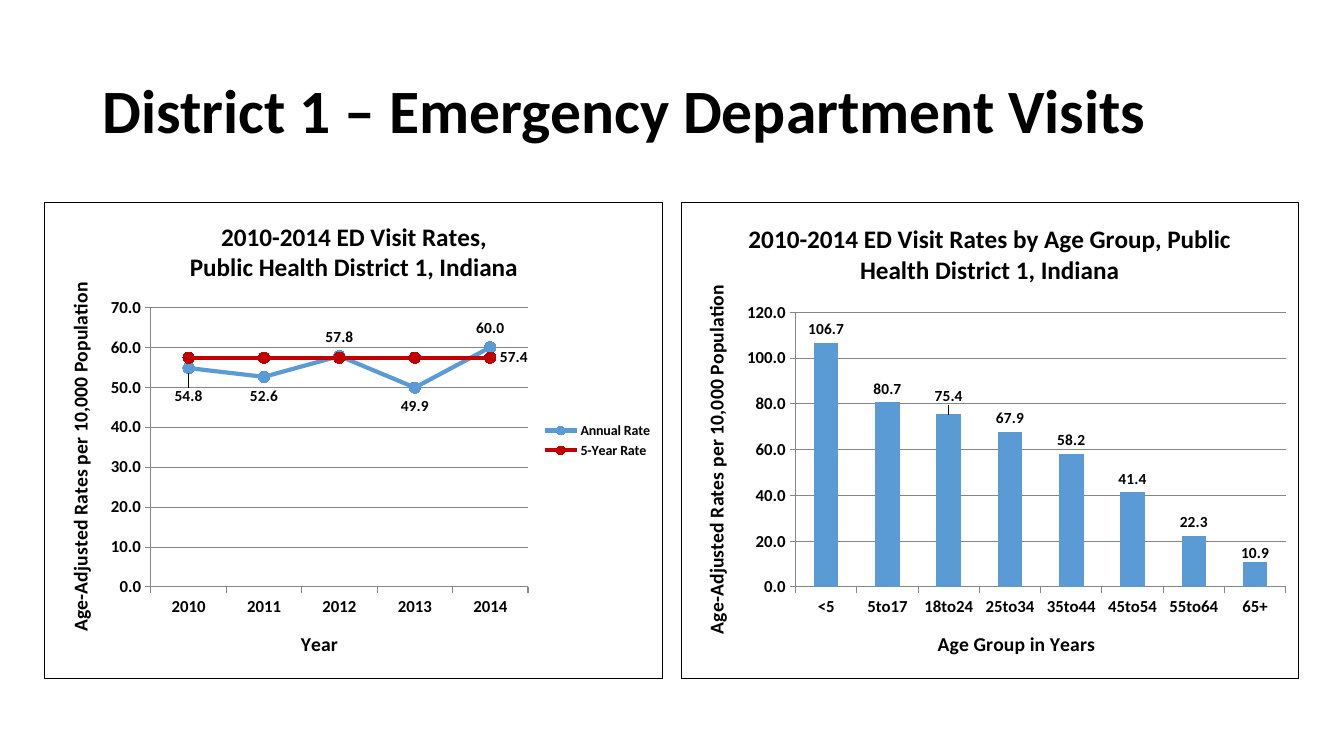
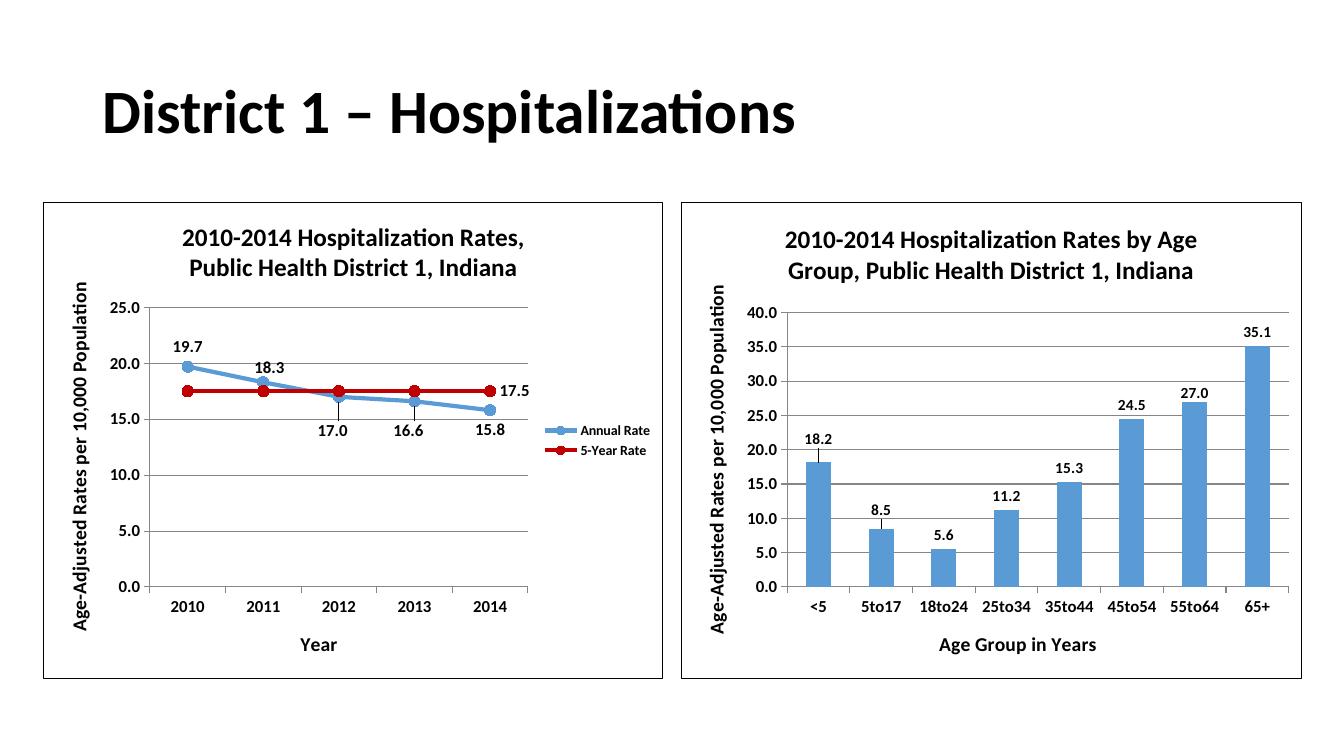
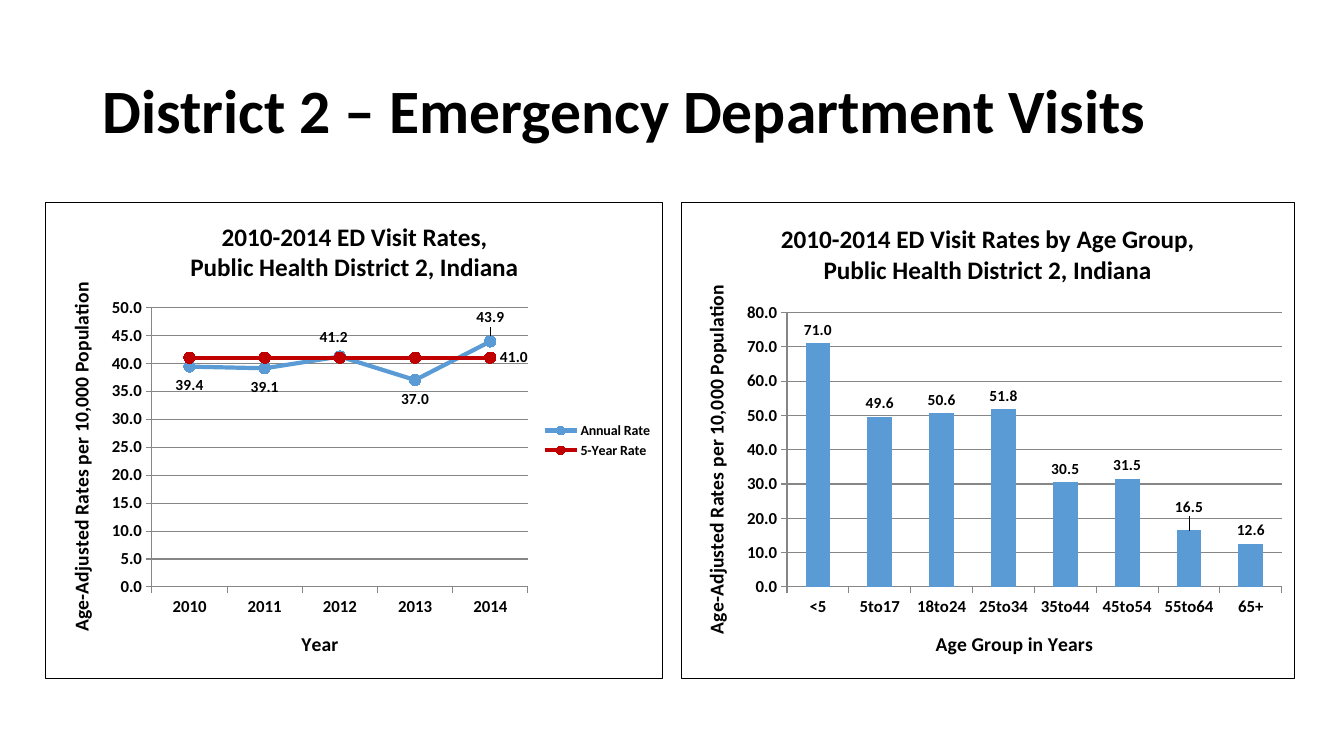
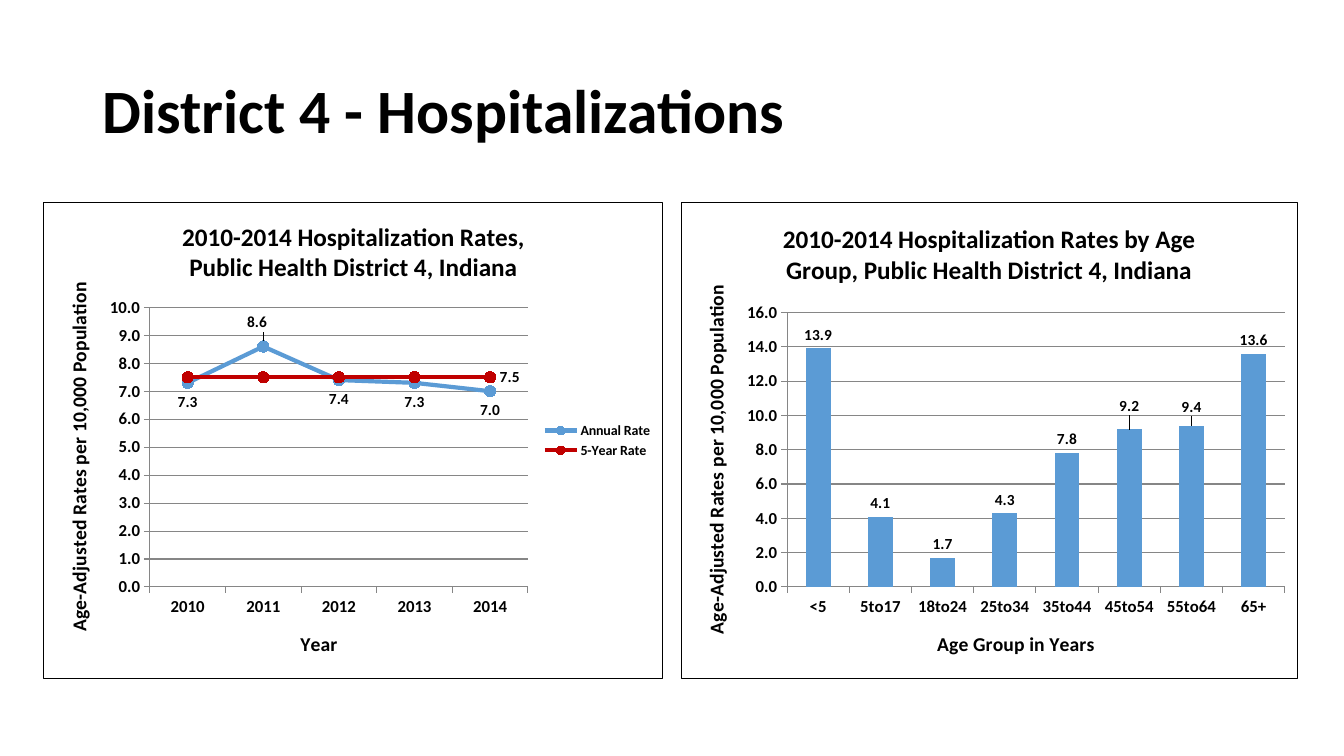
from dataclasses import dataclass

from lxml.etree import SubElement
from pptx import Presentation
from pptx.chart.data import CategoryChartData
from pptx.dml.color import RGBColor
from pptx.enum.chart import (XL_CHART_TYPE, XL_LABEL_POSITION, XL_LEGEND_POSITION,
                             XL_MARKER_STYLE, XL_TICK_MARK)
from pptx.enum.text import MSO_ANCHOR
from pptx.oxml import parse_xml
from pptx.oxml.ns import nsdecls, qn
from pptx.util import Inches, Pt

# Shared look
BLACK = RGBColor(0x00, 0x00, 0x00)
BLUE = RGBColor(0x5B, 0x9B, 0xD5)
RED = RGBColor(0xC0, 0x00, 0x00)
GREY = RGBColor(0x86, 0x86, 0x86)
FONT = "Calibri"
HEADING = {"size": Pt(44), "bold": True}
CHART_TITLE = {"size": Pt(18), "bold": True}
AXIS_TITLE = {"size": Pt(14), "bold": True}
TICKS = {"size": Pt(12), "bold": True}
LEGEND = {"size": Pt(10), "bold": True}

# Shared grid, in inches
CHART_TOP, CHART_HEIGHT = 2, 4.74
TREND_RIGHT, AGE_LEFT = 6.58, 6.75

YEARS = ["2010", "2011", "2012", "2013", "2014"]
AGE_GROUPS = ["<5", "5to17", "18to24", "25to34", "35to44", "45to54", "55to64", "65+"]
RATE_AXIS = "Age-Adjusted Rates per 10,000 Population"
ABOVE, BELOW, RIGHT, OUTSIDE = (XL_LABEL_POSITION.ABOVE, XL_LABEL_POSITION.BELOW,
                                XL_LABEL_POSITION.RIGHT, XL_LABEL_POSITION.OUTSIDE_END)


@dataclass
class Trend:
    left: float
    annual: list
    five_year: float
    scale: tuple      # axis maximum, step
    above: tuple      # points labelled above the line
    nudges: dict      # point: label shift as shares of the chart
    label_size: int = 11


@dataclass
class Ages:
    width: float
    rates: list
    scale: tuple
    nudges: dict


@dataclass
class District:
    heading: str
    measure: str
    place: str
    trend: Trend
    ages: Ages


DISTRICTS = [
    District("District 1 – Emergency Department Visits", "ED Visit", "District 1",
             Trend(0.44, [54.8, 52.6, 57.8, 49.9, 60], 57.4, (70, 10), (2, 4),
                   {0: (0, 0.02)}),
             Ages(6.13, [106.7, 80.7, 75.4, 67.9, 58.2, 41.4, 22.3, 10.9], (120, 20),
                  {2: (0, -0.01), 7: (0, 0.01)})),
    District("District 1 – Hospitalizations", "Hospitalization", "District 1",
             Trend(0.43, [19.7, 18.3, 17, 16.6, 15.8], 17.5, (25, 5), (0, 1),
                   {1: (0.01, 0.01), 2: (-0.01, 0.03), 3: (-0.01, 0.02)}, 12),
             Ages(6.16, [18.2, 8.5, 5.6, 11.2, 15.3, 24.5, 27, 35.1], (40, 5),
                  {0: (0, -0.02), 1: (0, -0.01), 6: (0, 0.01)})),
    District("District 2 – Emergency Department Visits", "ED Visit", "District 2",
             Trend(0.45, [39.4, 39.1, 41.2, 37, 43.9], 41, (50, 5), (2, 4),
                   {2: (-0.01, 0), 4: (0, -0.01)}),
             Ages(6.09, [71, 49.6, 50.6, 51.8, 30.5, 31.5, 16.5, 12.6], (80, 10),
                  {6: (0, -0.02)})),
    District("District 4 - Hospitalizations", "Hospitalization", "District 4",
             Trend(0.43, [7.3, 8.6, 7.4, 7.3, 7], 7.5, (10, 1), (1,),
                   {1: (-0.01, -0.01)}),
             Ages(6.12, [13.9, 4.1, 1.7, 4.3, 7.8, 9.2, 9.4, 13.6], (16, 2),
                  {5: (0, -0.02), 6: (0, -0.01)})),
]


def style_font(font, style):
    for name, value in {"name": FONT, **style}.items():
        setattr(font, name, value)
    font.color.rgb = BLACK


def write_title(titled, text, style):
    """Give a chart or an axis its title, one paragraph a line."""
    titled.has_title = True
    title = titled.chart_title if hasattr(titled, "chart_title") else titled.axis_title
    title.text_frame.text = text
    for paragraph in title.text_frame.paragraphs:
        style_font(paragraph.runs[0].font, style)


def add_heading(slide, text):
    box = slide.shapes.add_textbox(Inches(0.92), Inches(0.4), Inches(11.5), Inches(1.45))
    frame = box.text_frame
    frame.word_wrap = True
    frame.vertical_anchor = MSO_ANCHOR.MIDDLE
    paragraph = frame.paragraphs[0]
    paragraph.line_spacing = 0.9
    run = paragraph.add_run()
    run.text = text
    style_font(run.font, HEADING)


def style_axis(axis, title):
    write_title(axis, title, AXIS_TITLE)
    style_font(axis.tick_labels.font, TICKS)
    axis.major_tick_mark = XL_TICK_MARK.OUTSIDE
    axis.minor_tick_mark = XL_TICK_MARK.NONE
    axis.format.line.color.rgb = GREY


def frame_chart(chart):
    """Square white chart area with a thin black border."""
    space = chart.element
    if space.find(qn("c:roundedCorners")) is None:
        space.find(qn("c:date1904")).addnext(
            parse_xml(f'<c:roundedCorners {nsdecls("c")} val="0"/>'))
    space.find(qn("c:chart")).addnext(parse_xml(
        f'<c:spPr {nsdecls("c", "a")}>'
        '<a:solidFill><a:srgbClr val="FFFFFF"/></a:solidFill>'
        f'<a:ln w="{Pt(0.75)}"><a:solidFill><a:srgbClr val="{BLACK}"/></a:solidFill></a:ln>'
        '</c:spPr>'))


def add_rate_chart(slide, kind, left, width, title, category_title, categories, series, scale):
    data = CategoryChartData(number_format="0.0")
    data.categories = categories
    for name, values in series.items():
        data.add_series(name, values)
    chart = slide.shapes.add_chart(kind, Inches(left), Inches(CHART_TOP), Inches(width),
                                   Inches(CHART_HEIGHT), data).chart
    style_font(chart.font, {"size": Pt(10)})
    frame_chart(chart)
    write_title(chart, title, CHART_TITLE)
    chart.has_legend = False
    chart.plots[0].vary_by_categories = False

    style_axis(chart.category_axis, category_title)
    rates = chart.value_axis
    style_axis(rates, RATE_AXIS)
    rates.minimum_scale = 0
    rates.maximum_scale, rates.major_unit = scale
    rates.tick_labels.number_format = "0.0"
    rates.tick_labels.number_format_is_linked = False
    rates.major_gridlines.format.line.color.rgb = GREY
    chart.element.xpath(".//c:valAx/c:title//a:bodyPr")[0].set("rot", "-5400000")
    return chart


def label_series(series, position, style):
    labels = series.data_labels
    labels.show_value = True
    labels.position = position
    labels.number_format = "0.0"
    labels.number_format_is_linked = False
    style_font(labels.font, style)


def label_point(series, index, position, style):
    label = series.points[index].data_label
    label.position = position
    style_font(label.font, style)


def nudge_label(chart, index, shift):
    """Move a label of the first series by shares of the chart."""
    mark = chart.element.xpath(f".//c:ser[1]/c:dLbls/c:dLbl/c:idx[@val='{index}']")[0]
    layout = parse_xml(f'<c:layout {nsdecls("c")}><c:manualLayout/></c:layout>')
    for axis, share in zip("xy", shift):
        SubElement(layout[0], qn(f"c:{axis}")).set("val", str(share))
    mark.addnext(layout)


def add_trend_chart(slide, district):
    trend = district.trend
    chart = add_rate_chart(
        slide, XL_CHART_TYPE.LINE_MARKERS, trend.left, TREND_RIGHT - trend.left,
        f"2010-2014 {district.measure} Rates,\nPublic Health {district.place}, Indiana",
        "Year", YEARS,
        {"Annual Rate": trend.annual, "5-Year Rate": [trend.five_year] * len(YEARS)},
        trend.scale)
    chart.has_legend = True
    chart.legend.position = XL_LEGEND_POSITION.RIGHT
    chart.legend.include_in_layout = False
    style_font(chart.legend.font, LEGEND)

    annual, five_year = chart.plots[0].series
    for line, color in ((annual, BLUE), (five_year, RED)):
        line.smooth = False
        line.format.line.color.rgb = color
        line.format.line.width = Pt(3)
        line.marker.style = XL_MARKER_STYLE.CIRCLE
        line.marker.size = 8
        line.marker.format.fill.solid()
        line.marker.format.fill.fore_color.rgb = color
        line.marker.format.line.color.rgb = color

    # Labels: every annual rate, and the last point of the flat line
    style = {"size": Pt(trend.label_size), "bold": True}
    label_series(annual, BELOW, style)
    for index in sorted({*trend.above, *trend.nudges}):
        label_point(annual, index, ABOVE if index in trend.above else BELOW, style)
    for index, shift in trend.nudges.items():
        nudge_label(chart, index, shift)
    label_point(five_year, len(YEARS) - 1, RIGHT, style)


def add_age_chart(slide, district):
    ages = district.ages
    chart = add_rate_chart(
        slide, XL_CHART_TYPE.COLUMN_CLUSTERED, AGE_LEFT, ages.width,
        f"2010-2014 {district.measure} Rates by Age Group, "
        f"Public Health {district.place}, Indiana",
        "Age Group in Years", AGE_GROUPS, {"Series 1": ages.rates}, ages.scale)
    chart.plots[0].gap_width = 150
    columns = chart.plots[0].series[0]
    columns.format.fill.solid()
    columns.format.fill.fore_color.rgb = BLUE
    style = {"size": Pt(11), "bold": True}
    label_series(columns, OUTSIDE, style)
    for index, shift in ages.nudges.items():
        label_point(columns, index, OUTSIDE, style)
        nudge_label(chart, index, shift)


def main():
    deck = Presentation()
    deck.slide_width, deck.slide_height = Inches(13.33), Inches(7.5)
    for district in DISTRICTS:
        slide = deck.slides.add_slide(deck.slide_layouts[6])
        add_heading(slide, district.heading)
        add_trend_chart(slide, district)
        add_age_chart(slide, district)
    deck.save("out.pptx")


if __name__ == "__main__":
    main()
